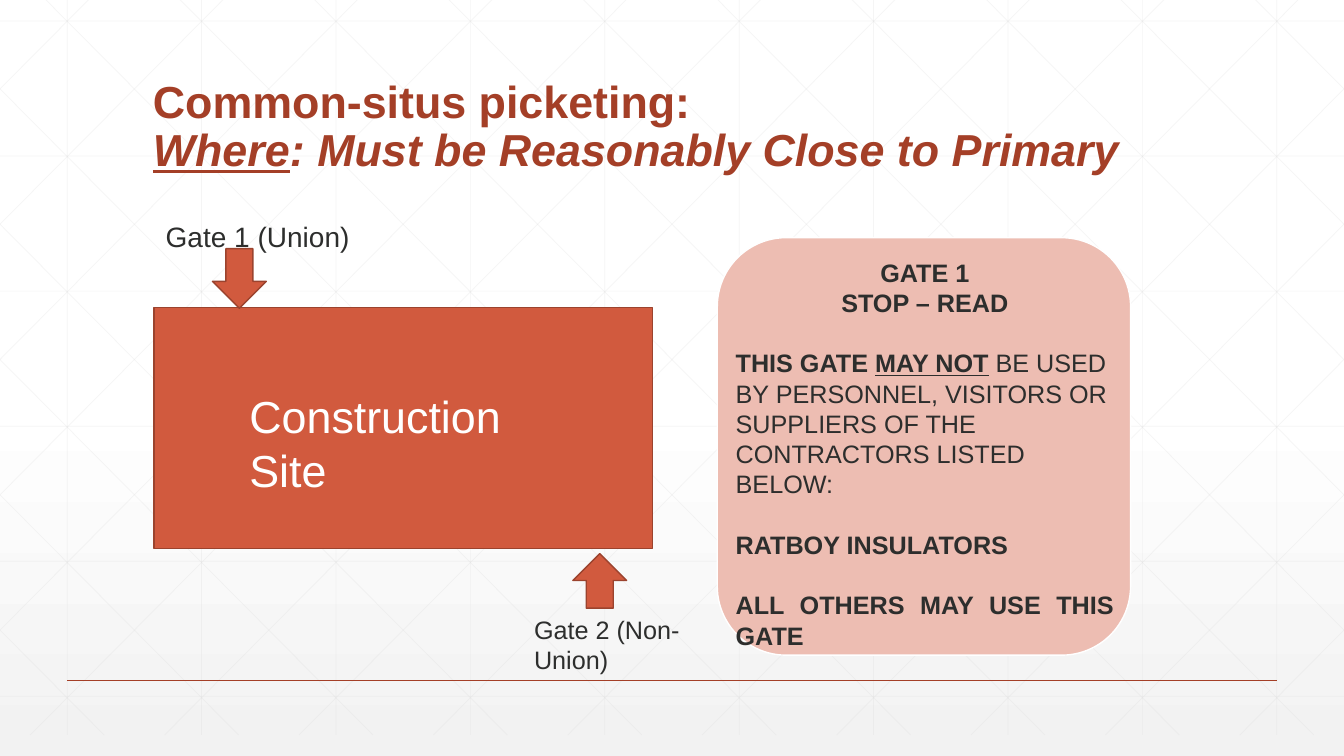
from lxml.etree import SubElement
from pptx import Presentation
from pptx.dml.color import RGBColor
from pptx.enum.shapes import MSO_CONNECTOR as Connector, MSO_SHAPE as Shape
from pptx.enum.text import MSO_ANCHOR as Anchor, MSO_AUTO_SIZE as AutoSize, PP_ALIGN as Align
from pptx.oxml.ns import qn
from pptx.util import Inches, Pt

WHITE = RGBColor(0xFF, 0xFF, 0xFF)
MIST = RGBColor(0xF2, 0xF2, 0xF2)
LATTICE = RGBColor(0xD9, 0xD9, 0xD9)
RUST = RGBColor(0xA4, 0x3F, 0x27)
BRICK = RGBColor(0xD1, 0x5A, 0x3E)
EDGE = RGBColor(0x9B, 0x43, 0x2E)
BLUSH = RGBColor(0xED, 0xBD, 0xB2)
INK = RGBColor(0x2D, 0x2E, 0x2D)

# The slide is a grid of 160 columns by 90 rows of square cells
COLUMNS, ROWS = 160, 90
CELL = Inches(1) / 12
BLANK_LINE = 21.6  # points


def cells(*counts):
    return [round(count * CELL) for count in counts]


class SlideBuilder:
    font = "Arial"

    def __init__(self, deck):
        self.page = deck.slides.add_slide(deck.slide_layouts[1])
        self.shapes = self.page.shapes

    def background(self, top, bottom, start):
        fill = self.page.background.fill
        fill.gradient()
        fill.gradient_angle = 270
        for stop, color, position in zip(fill.gradient_stops, (top, bottom), (start, 1)):
            stop.color.rgb, stop.position = color, position

    def line(self, x1, y1, x2, y2, color, width, opacity=None):
        line = self.shapes.add_connector(Connector.STRAIGHT, *cells(x1, y1, x2, y2))
        line.line.color.rgb, line.line.width = color, Pt(width)
        properties = line.element.spPr
        SubElement(properties, qn("a:effectLst"))
        if opacity is not None:
            tone = properties.find(".//" + qn("a:srgbClr"))
            SubElement(tone, qn("a:alpha")).set("val", str(opacity * 1000))

    def diagonal(self, start, run, top, bottom, mirrored):
        """Slanted lattice line, cut at the slide's left and right edges."""
        left, right = max(start, 0), min(start + run, COLUMNS)
        slope = (bottom - top) / run
        y1, y2 = (top + (x - start) * slope for x in (left, right))
        if mirrored:
            left, right = COLUMNS - left, COLUMNS - right
        self.line(left, y1, right, y2, LATTICE, 0.5, 25)

    def shape(self, kind, at, fill, edge, turn=0):
        shape = self.shapes.add_shape(kind, *cells(*at))
        shape.shadow.inherit = False
        shape.fill.solid()
        shape.fill.fore_color.rgb = fill
        shape.line.color.rgb, shape.line.width = edge, Pt(1)
        shape.rotation = turn

    def paragraph(self, para, spans, size, color, align=Align.LEFT, before=0, spacing=None,
                  indent=0):
        """Fill a paragraph from (text, style letters) spans; b, i and u are styles."""
        para.alignment, para.space_before, para.line_spacing = align, Pt(before), spacing
        font = para.font
        font.name, font.size, font.color.rgb = self.font, Pt(size), color
        shared = set.intersection(*(set(style) for _, style in spans))
        font.bold, font.italic = "b" in shared, "i" in shared
        for text, style in spans:
            span = para.add_run()
            span.text = text.rstrip("\n")
            if "b" in style and "b" not in shared:
                span.font.bold = True
            if "i" in style and "i" not in shared:
                span.font.italic = True
            if "u" in style:
                span.font.underline = True
            if text.endswith("\n"):
                para.add_line_break()
        if indent:
            properties = para._p.get_or_add_pPr()
            properties.set("marL", str(Inches(indent)))
            properties.set("indent", "0")

    def placeholder(self, index, at, spans, anchor, **style):
        holder = self.page.placeholders[index]
        holder.left, holder.top, holder.width, holder.height = cells(*at)
        holder.element.getparent().append(holder.element)  # in front of the lattice
        frame = holder.text_frame
        frame.auto_size, frame.vertical_anchor = AutoSize.NONE, anchor
        para = frame.paragraphs[0]
        self.paragraph(para, spans, **style)
        properties = para._p.get_or_add_pPr()
        bullet = properties.makeelement(qn("a:buNone"), {})
        properties.find(qn("a:defRPr")).addprevious(bullet)

    def text(self, at, paragraphs, **style):
        box = self.shapes.add_textbox(*cells(*at))
        frame = box.text_frame
        frame.word_wrap = True
        for number, (spans, extra) in enumerate(paragraphs):
            para = frame.add_paragraph() if number else frame.paragraphs[0]
            self.paragraph(para, spans, **style, **extra)


def main():
    deck = Presentation()
    deck.slide_width, deck.slide_height = cells(COLUMNS, ROWS)
    slide = SlideBuilder(deck)

    # Background lattice
    slide.background(WHITE, MIST, 0.53)
    pitch, top, bottom = 16, -2.5, 87.5
    for step in range(10):
        x = pitch * (step + 0.5)
        slide.line(x, top, x, bottom, LATTICE, 0.5, 25)
    for step in range(6):
        y = 2.5 + 16.08 * step
        slide.line(0, y, COLUMNS, y, LATTICE, 0.5, 25)
    for mirrored in (False, True):
        for step in range(-5, 10):
            slide.diagonal(3 + pitch * step, 89.4, top, bottom, mirrored)
    slide.line(8, 81, 152, 81, RUST, 1)

    # Title and first gate label
    slide.placeholder(0, (17, 6.6, 126, 15), [
        ("Common-situs picketing: \n", "b"),
        ("Where", "biu"),
        (": Must be Reasonably Close to Primary", "bi"),
    ], Anchor.BOTTOM, size=32, color=RUST, spacing=0.9)
    slide.placeholder(1, (17, 26, 60, 50), [(" Gate 1 (Union)", "")], Anchor.TOP,
                      size=20, color=INK, before=18, spacing=0.9, indent=0.05)

    # Construction site with its two gates
    slide.shape(Shape.RECTANGLE, (18.36, 36.6, 59.3, 28.7), BRICK, EDGE)
    slide.text((28.5, 45.7, 36.4, 14.2), [([("Construction Site", "")], {})], size=32, color=WHITE)
    slide.shape(Shape.DOWN_ARROW, (25.3, 29.6, 6.4, 7.1), BRICK, EDGE)
    slide.shape(Shape.DOWN_ARROW, (68.2, 65.9, 6.4, 6.5), BRICK, EDGE, turn=180)
    slide.text((61.8, 72.5, 21.6, 8.5), [([("Gate 2 (Non-Union)", "")], {})],
               size=18, color=INK, indent=0.05)

    # Notice posted at gate 1
    slide.shape(Shape.ROUNDED_RECTANGLE, (85.4, 28.3, 49.2, 49.7), BLUSH, WHITE)
    slide.text((86.4, 30, 47.4, 48.5), [
        ([("GATE 1", "b")], {"align": Align.CENTER}),
        ([("STOP – READ", "b")], {"align": Align.CENTER}),
        ([("THIS GATE ", "b"), ("MAY NOT", "bu"),
          (" BE USED BY PERSONNEL, VISITORS OR SUPPLIERS OF THE CONTRACTORS LISTED BELOW:", "")],
         {"before": BLANK_LINE}),
        ([("RATBOY INSULATORS", "b")], {"align": Align.JUSTIFY, "before": BLANK_LINE}),
        ([("ALL OTHERS MAY USE THIS GATE", "b")], {"align": Align.JUSTIFY, "before": BLANK_LINE}),
    ], size=18, color=INK)

    deck.save("out.pptx")


if __name__ == "__main__":
    main()
